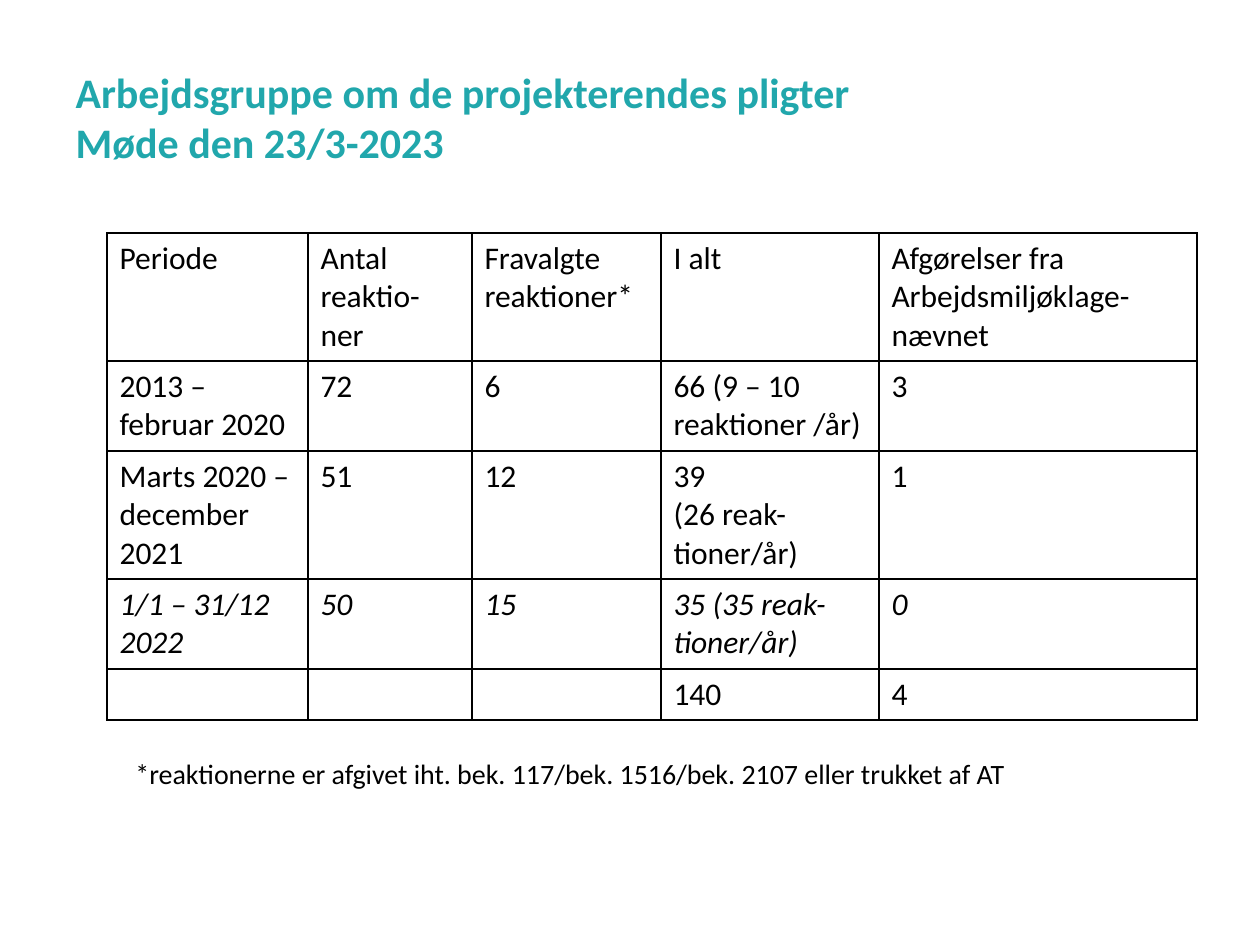
from lxml.etree import SubElement
from pptx import Presentation
from pptx.dml.color import RGBColor
from pptx.enum.text import MSO_ANCHOR as Anchor, MSO_AUTO_SIZE as AutoSize, PP_ALIGN as Align
from pptx.oxml.ns import qn
from pptx.util import Emu, Pt

TEAL = RGBColor(0x21, 0xA7, 0xAC)
BLACK = RGBColor(0, 0, 0)
WHITE = RGBColor(0xFF, 0xFF, 0xFF)

TITLE = ["Arbejdsgruppe om de projekterendes pligter ", "Møde den 23/3-2023"]
HEADINGS = ["Periode", "Antal reaktio-ner", "Fravalgte reaktioner*", "I alt",
            "Afgørelser fra Arbejdsmiljøklage-nævnet"]
PERIODS = [
    ["2013 – februar 2020", "72", "6", "66 (9 – 10 reaktioner /år)", "3"],
    ["Marts 2020 – december 2021", "51", "12", "39\n(26 reak-tioner/år)", "1"],
    ["1/1 – 31/12 2022", "50", "15", "35 (35 reak-tioner/år)", "0"],
]
TOTALS = ["", "", "", "140", "4"]
FOOTNOTE = "*reaktionerne er afgivet iht. bek. 117/bek. 1516/bek. 2107 eller trukket af AT"


def px(length):
    return Emu(round(length * 914400 / 126))


class Deck:
    """Holds the style and the current slide."""

    font = "Calibri"

    def __init__(self, width, height):
        self.presentation = Presentation()
        self.presentation.slide_width = px(width)
        self.presentation.slide_height = px(height)
        self.slide = self.presentation.slides.add_slide(self.presentation.slide_layouts[5])

    def run(self, paragraph, text, size, color=BLACK, bold=False, italic=False):
        run = paragraph.add_run()
        run.text = text
        run.font.name, run.font.size = self.font, Pt(size)
        run.font.bold, run.font.italic = bold, italic
        run.font.color.rgb = color

    def title(self, lines, left, top, width, height):
        title = self.slide.shapes.title
        title.left, title.top, title.width, title.height = map(px, (left, top, width, height))
        frame = title.text_frame
        frame.vertical_anchor, frame.auto_size = Anchor.MIDDLE, AutoSize.NONE
        paragraph = frame.paragraphs[0]
        paragraph.alignment = Align.LEFT
        for index, line in enumerate(lines):
            if index:
                paragraph.add_line_break()
            self.run(paragraph, line, 24, TEAL, bold=True)

    def text(self, words, left, top, width, height):
        box = self.slide.shapes.add_textbox(*map(px, (left, top, width, height)))
        box.text_frame.word_wrap = True
        box.text_frame.auto_size = AutoSize.SHAPE_TO_FIT_TEXT
        self.run(box.text_frame.paragraphs[0], words, 16)

    def borders(self, cell):
        properties = cell.fill._xPr
        for position, side in enumerate(("a:lnL", "a:lnR", "a:lnT", "a:lnB")):
            line = SubElement(properties, qn(side), w=str(Pt(1)))
            fill = SubElement(line, qn("a:solidFill"))
            SubElement(fill, qn("a:srgbClr"), val=str(BLACK))
            properties.insert(position, line)

    def cell(self, cell, words, italic):
        cell.fill.solid()
        cell.fill.fore_color.rgb = WHITE
        self.borders(cell)
        frame = cell.text_frame
        for index, line in enumerate(words.split("\n") if words else []):
            paragraph = frame.add_paragraph() if index else frame.paragraphs[0]
            self.run(paragraph, line, 18, italic=italic)

    def table(self, rows, left, top, widths, heights, italic_row):
        bounds = map(px, (left, top, sum(widths), sum(heights)))
        table = self.slide.shapes.add_table(len(rows), len(widths), *bounds).table
        table.first_row = table.horz_banding = False
        for column, width in zip(table.columns, widths):
            column.width = px(width)
        for index, (row, height, texts) in enumerate(zip(table.rows, heights, rows)):
            row.height = px(height)
            for cell, words in zip(row.cells, texts):
                self.cell(cell, words, italic=index == italic_row)


def main():
    deck = Deck(1260, 945)
    deck.table([HEADINGS, *PERIODS, TOTALS], 107, 233, [201, 164, 189, 218, 318],
               [128, 90, 128, 90, 51], italic_row=len(PERIODS))
    deck.text(FOOTNOTE, 123, 750, 912, 47)
    deck.title(TITLE, 63, 38, 1134, 157)
    deck.presentation.save("out.pptx")


if __name__ == "__main__":
    main()
